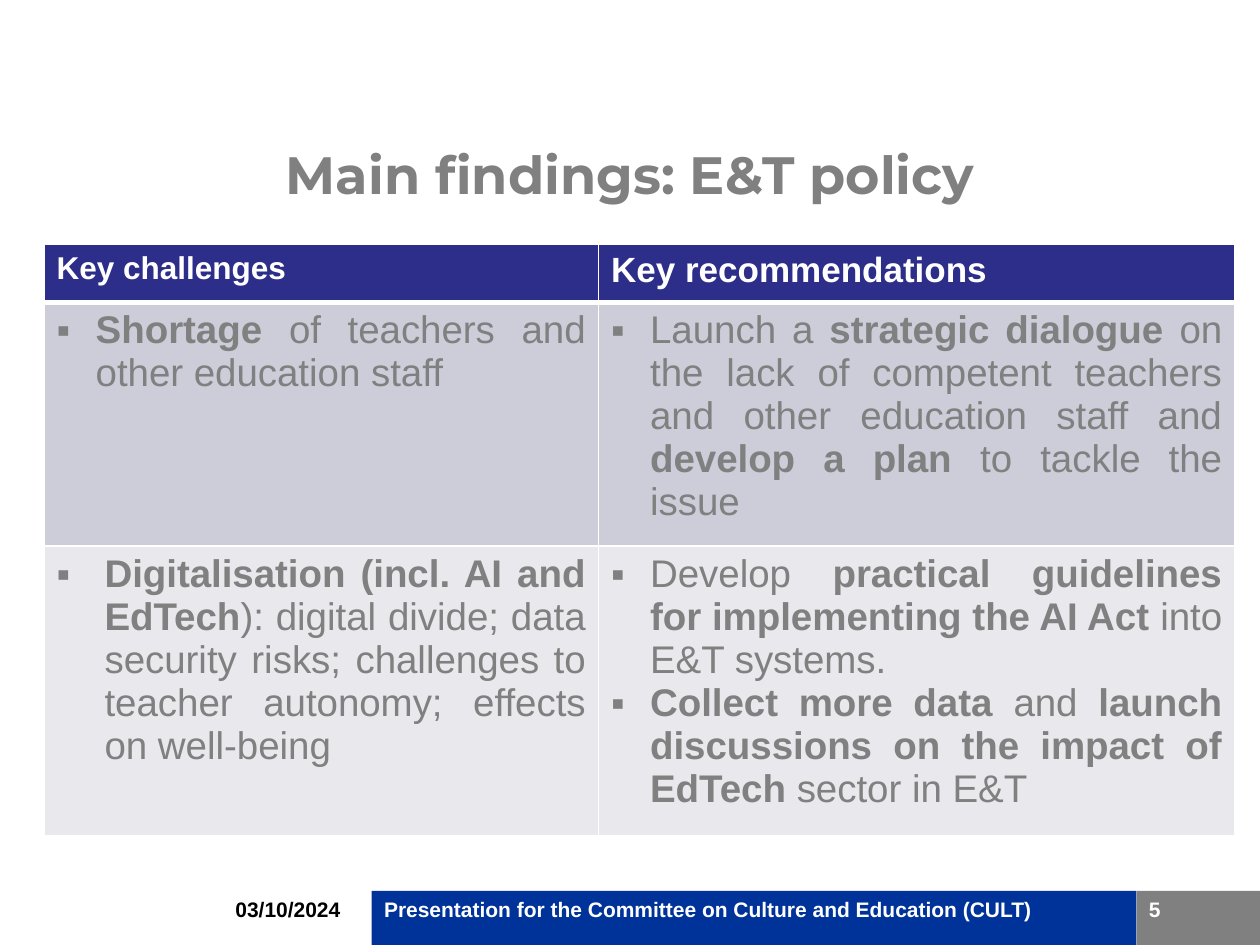
from dataclasses import dataclass
from lxml import etree
from pptx import Presentation
from pptx import util as u
from pptx.dml.color import RGBColor
from pptx.enum import shapes, text
from pptx.oxml import ns


@dataclass(frozen=True)
class Theme:
    face: str = "Arial"
    head: str = "Montserrat"
    gray: str = "808080"
    white: str = "FFFFFF"
    black: str = "000000"
    blue: str = "003399"
    navy: str = "2D2D8A"
    bands: tuple = ("CDCDDA", "E8E8ED")
    title: int = 30
    body: int = 22
    foot: int = 12


T = Theme()
WIDE, HIGH = 10, 7.5
TITLE = "Main findings: E&T policy"
HEADS = [("Key challenges", 18), ("Key recommendations", 20)]

# Each cell: hanging indent, then paragraphs of (words, bold) runs.
ROWS = [
    [
        (0.31, [[("Shortage ", True), ("of teachers and other education staff", False)]]),
        (0.31, [[("Launch a", False), (" strategic dialogue ", True),
                 ("on the lack of competent teachers and other education staff and ", False),
                 ("develop a plan ", True), ("to tackle the issue", False)]]),
    ],
    [
        (0.38, [[("Digitalisation (incl. AI and EdTech", True),
                 ("): digital divide; data security risks; challenges to teacher "
                  "autonomy; effects on well-being", False)]]),
        (0.31, [[("Develop", False),
                 (" practical guidelines for implementing the AI Act ", True),
                 ("into E&T systems.", False)],
                [("Collect more data ", True), ("and ", False),
                 ("launch discussions on the impact of EdTech ", True),
                 ("sector in E&T", False)]]),
    ],
]
COLS = [4.4, 5.05]
TALL = [0.46, 1.41, 2.3]

FOOT = [
    ("03/10/2024", 1.77, 2.87, None, T.black),
    ("Presentation for the Committee on Culture and Education (CULT)",
     2.95, 9.02, T.blue, T.white),
    ("5", 9.02, WIDE, T.gray, T.white),
]
FOOT_TOP = 7.07


def rgb(code):
    return RGBColor.from_string(code)


def add_run(para, words, size, color, bold=True, face=T.face):
    run = para.add_run()
    run.text = words
    font = run.font
    font.name, font.size, font.bold = face, u.Pt(size), bold
    font.color.rgb = rgb(color)


def add_mark(para, hang):
    props = para._p.get_or_add_pPr()
    props.set("marL", str(u.Inches(hang)))
    props.set("indent", str(-u.Inches(hang)))
    etree.SubElement(props, ns.qn("a:buFont"), typeface=T.face)
    etree.SubElement(props, ns.qn("a:buChar"), char="▪")


def dress(cell, color, base=1):
    props = cell._tc.get_or_add_tcPr()
    for side, width in (("L", 1), ("R", 1), ("T", 1), ("B", base)):
        line = etree.SubElement(props, ns.qn("a:ln" + side), w=str(u.Pt(width)))
        fill = etree.SubElement(line, ns.qn("a:solidFill"))
        etree.SubElement(fill, ns.qn("a:srgbClr"), val=T.white)
    cell.fill.solid()
    cell.fill.fore_color.rgb = rgb(color)


def add_title(slide):
    title = slide.shapes.title
    title.left, title.top = u.Inches(0.5), u.Inches(1.08)
    title.width, title.height = u.Inches(WIDE - 1), u.Inches(0.87)
    frame = title.text_frame
    frame.vertical_anchor = text.MSO_ANCHOR.TOP
    para = frame.paragraphs[0]
    para.alignment = text.PP_ALIGN.CENTER
    add_run(para, TITLE, T.title, T.gray, face=T.head)


def add_grid(slide):
    grid = slide.shapes.add_table(
        len(TALL), len(COLS), u.Inches(0.35), u.Inches(1.94),
        u.Inches(sum(COLS)), u.Inches(sum(TALL))).table
    for col, width in zip(grid.columns, COLS):
        col.width = u.Inches(width)
    for row, height in zip(grid.rows, TALL):
        row.height = u.Inches(height)
    for c, (words, size) in enumerate(HEADS):
        cell = grid.cell(0, c)
        dress(cell, T.navy, 3)
        add_run(cell.text_frame.paragraphs[0], words, size, T.white)
    for r, (row, band) in enumerate(zip(ROWS, T.bands), 1):
        for c, (hang, paras) in enumerate(row):
            cell = grid.cell(r, c)
            dress(cell, band, 1)
            frame = cell.text_frame
            for i, runs in enumerate(paras):
                para = frame.add_paragraph() if i else frame.paragraphs[0]
                para.alignment = text.PP_ALIGN.JUSTIFY
                add_mark(para, hang)
                for words, bold in runs:
                    add_run(para, words, T.body, T.gray, bold)


def add_foot(slide):
    for words, left, right, fill, color in FOOT:
        place = [u.Inches(n) for n in (left, FOOT_TOP, right - left, HIGH - FOOT_TOP)]
        if fill:
            box = slide.shapes.add_shape(shapes.MSO_SHAPE.RECTANGLE, *place)
            box.shadow.inherit = False
            box.fill.solid()
            box.fill.fore_color.rgb = rgb(fill)
            box.line.fill.background()
        else:
            box = slide.shapes.add_textbox(*place)
        frame = box.text_frame
        frame.word_wrap = True
        frame.vertical_anchor = text.MSO_ANCHOR.TOP
        para = frame.paragraphs[0]
        para.alignment = text.PP_ALIGN.LEFT
        add_run(para, words, T.foot, color)


def main():
    deck = Presentation()
    deck.slide_width, deck.slide_height = u.Inches(WIDE), u.Inches(HIGH)
    slide = deck.slides.add_slide(deck.slide_layouts[5])
    add_title(slide)
    add_foot(slide)
    add_grid(slide)
    deck.save("out.pptx")


if __name__ == "__main__":
    main()
